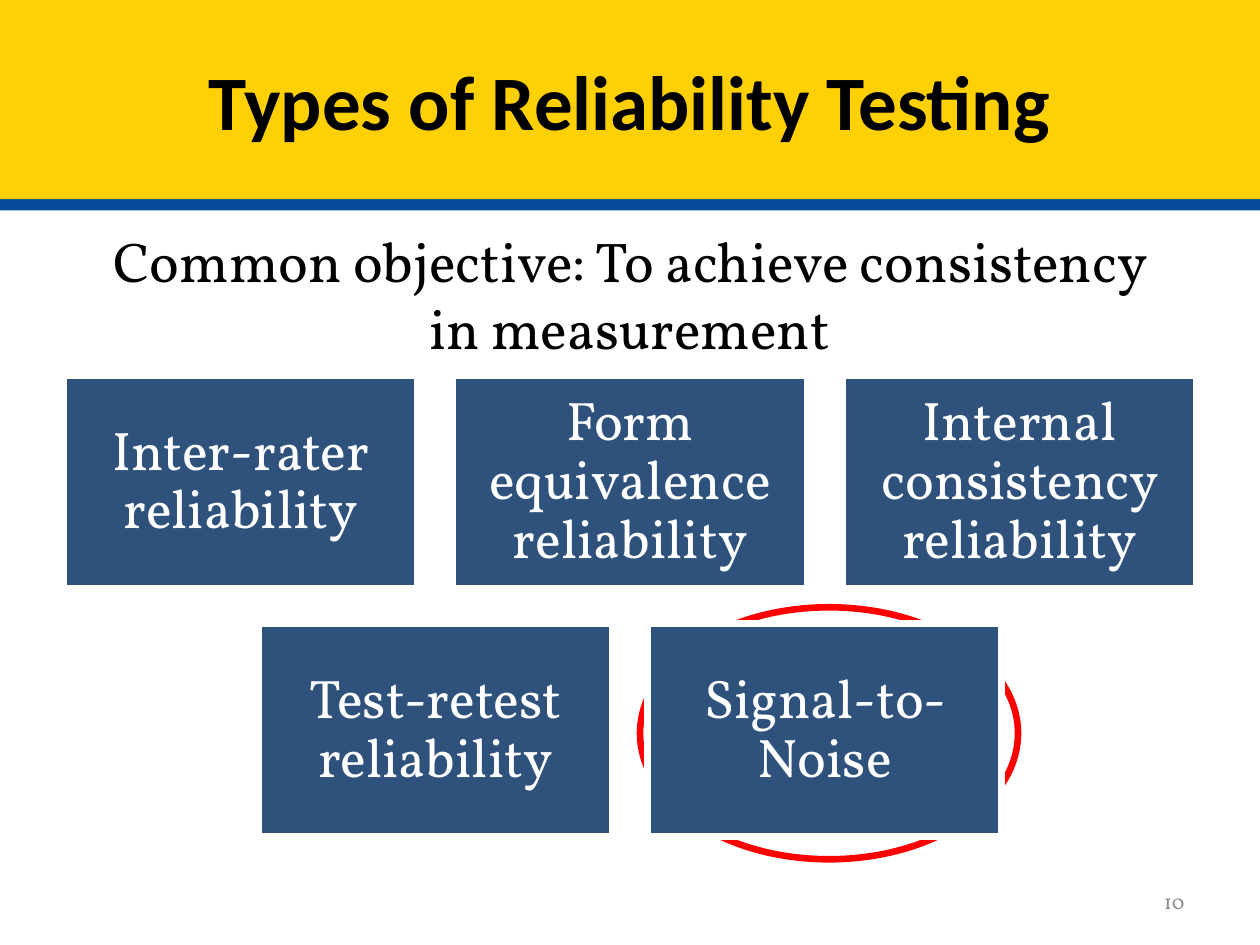
import pptx
import pptx.util
import pptx.dml.color
import pptx.enum.shapes
import pptx.enum.text

Inches, Pt = pptx.util.Inches, pptx.util.Pt
RGBColor = pptx.dml.color.RGBColor
Shape = pptx.enum.shapes.MSO_SHAPE
Align = pptx.enum.text.PP_ALIGN
Anchor = pptx.enum.text.MSO_ANCHOR

# Content
TITLE = "Types of Reliability Testing"
GOAL = "Common objective: To achieve consistency in measurement"
ROWS = [
    ["Inter-rater reliability", "Form equivalence reliability",
     "Internal consistency reliability"],
    ["Test-retest reliability", "Signal-to-Noise"],
]
NUMBER = "10"

# Look
YELLOW = RGBColor(0xFF, 0xD0, 0x04)
BLUE = RGBColor(0x08, 0x4A, 0x9C)
NAVY = RGBColor(0x2F, 0x52, 0x7D)
RED = RGBColor(0xFF, 0x00, 0x00)
WHITE = RGBColor(0xFF, 0xFF, 0xFF)
BLACK = RGBColor(0x00, 0x00, 0x00)
GRAY = RGBColor(0x8C, 0x8C, 0x8C)
SERIF, SANS = "Vollkorn", "Calibri"

# Grid of boxes
WIDE, HIGH = 10, 7.5
BOX_W, BOX_H, GAP, TOP = 2.81, 1.69, 0.28, 2.98


def add_shape(slide, kind, at, fill=None, line=None):
    shape = slide.shapes.add_shape(kind, *map(Inches, at))
    shape.shadow.inherit = False
    if fill is None:
        shape.fill.background()
    else:
        shape.fill.solid()
        shape.fill.fore_color.rgb = fill
    if line is None:
        shape.line.fill.background()
    else:
        shape.line.color.rgb = line
        shape.line.width = Pt(3.78)
    return shape


def add_box(slide, at):
    return slide.shapes.add_textbox(*map(Inches, at))


def set_text(shape, text, size, color, font=SERIF, align=Align.CENTER,
             anchor=Anchor.MIDDLE, bold=False):
    frame = shape.text_frame
    frame.text = text
    frame.word_wrap = True
    frame.vertical_anchor = anchor
    para = frame.paragraphs[0]
    para.alignment = align
    face = para.runs[0].font
    face.name, face.size, face.bold = font, Pt(size), bold
    face.color.rgb = color


def add_card(slide, text, left, top):
    card = add_shape(slide, Shape.RECTANGLE, (left, top, BOX_W, BOX_H),
                     NAVY, WHITE)
    set_text(card, text, 31, WHITE)
    frame = card.text_frame
    frame.margin_left = frame.margin_right = Inches(0.13)
    frame.margin_top = frame.margin_bottom = Inches(0.13)
    frame.paragraphs[0].line_spacing = 0.9


def main():
    deck = pptx.Presentation()
    deck.slide_width, deck.slide_height = Inches(WIDE), Inches(HIGH)
    slide = deck.slides.add_slide(deck.slide_layouts[6])

    # Slide number
    set_text(add_box(slide, (7.17, 6.95, 2.33, 0.4)), NUMBER, 12, GRAY,
             align=Align.RIGHT)

    # Red ring behind the last box
    add_shape(slide, Shape.OVAL, (5.08, 4.82, 3, 2), line=RED)

    # Rows of boxes, each centred on the slide
    for i, row in enumerate(ROWS):
        span = len(row) * (BOX_W + GAP) - GAP
        for j, text in enumerate(row):
            add_card(slide, text, (WIDE - span) / 2 + j * (BOX_W + GAP),
                     TOP + i * (BOX_H + GAP))

    # Objective
    set_text(add_box(slide, (0.75, 1.75, 8.5, 1.18)), GOAL, 32, BLACK,
             anchor=Anchor.TOP)

    # Title band with a blue edge below
    add_shape(slide, Shape.RECTANGLE, (0, 1.58, WIDE, 0.09), BLUE)
    band = add_shape(slide, Shape.RECTANGLE, (0, 0, WIDE, 1.58), YELLOW)
    set_text(band, TITLE, 44, BLACK, font=SANS, bold=True)

    deck.save("out.pptx")


if __name__ == "__main__":
    main()
